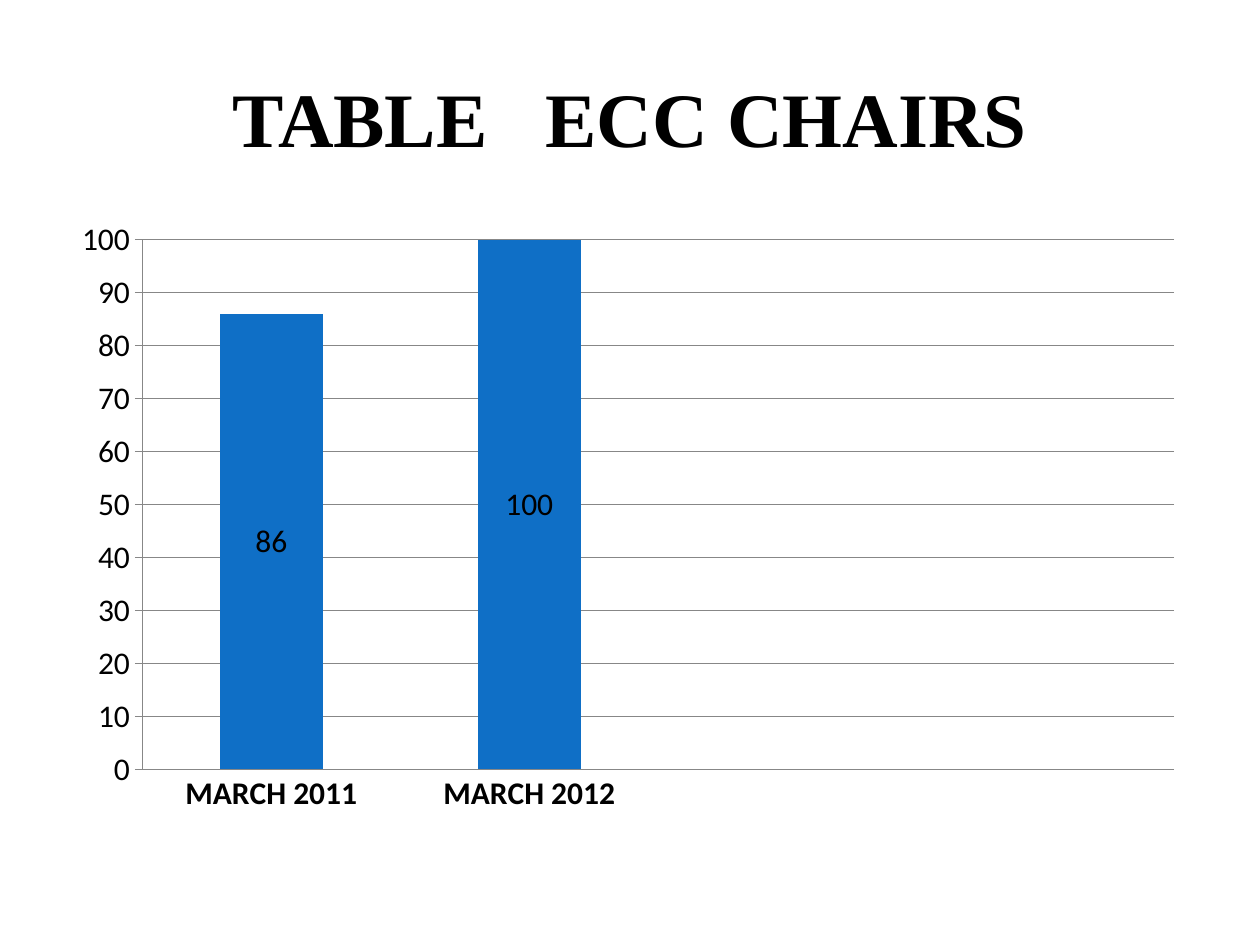
"""Build a slide with a column chart of ECC chairs in two years."""
from dataclasses import dataclass

from lxml import etree
from pptx import Presentation
from pptx.chart.data import CategoryChartData
from pptx.dml.color import RGBColor
from pptx.enum.chart import XL_CHART_TYPE, XL_LABEL_POSITION, XL_TICK_MARK
from pptx.enum.text import MSO_ANCHOR, PP_ALIGN
from pptx.util import Pt

STACKED = XL_CHART_TYPE.COLUMN_STACKED
CENTER = XL_LABEL_POSITION.CENTER
OUTSIDE, NO_TICK = XL_TICK_MARK.OUTSIDE, XL_TICK_MARK.NONE
MIDDLE, MID = MSO_ANCHOR.MIDDLE, PP_ALIGN.CENTER


@dataclass(frozen=True)
class Theme:
    ink: RGBColor = RGBColor(0, 0, 0)
    bar: RGBColor = RGBColor(0x0F, 0x6F, 0xC6)
    grid: RGBColor = RGBColor(0x87, 0x87, 0x87)
    head: str = "Times New Roman"
    body: str = "Calibri"
    large: int = 44
    small: int = 18


theme = Theme()


def write(frame, text, *, font, size, color, bold=False, align=MID):
    frame.word_wrap = True
    frame.vertical_anchor = MIDDLE
    line = frame.paragraphs[0]
    line.alignment = align
    run = line.add_run()
    run.text = text
    run.font.name, run.font.size, run.font.bold = font, Pt(size), bold
    run.font.color.rgb = color


deck = Presentation()
deck.slide_width, deck.slide_height = Pt(720), Pt(540)
slide = deck.slides.add_slide(deck.slide_layouts[5])

title = slide.shapes.title
title.left, title.top, title.width, title.height = Pt(36), Pt(21.6), Pt(648), Pt(90)
write(title.text_frame, "TABLE   ECC CHAIRS", font=theme.head,
      size=theme.large, color=theme.ink, bold=True)

data = CategoryChartData()
data.categories = ["MARCH 2011", "MARCH 2012", "", ""]
data.add_series("Series 1", [86, 100, None, None])
chart = slide.shapes.add_chart(STACKED, Pt(36), Pt(126), Pt(648), Pt(356.4), data).chart
chart.has_title = False
chart.has_legend = False
chart.font.name, chart.font.size = theme.body, Pt(theme.small)
chart.font.color.rgb = theme.ink

plot = chart.plots[0]
plot.gap_width, plot.overlap = 150, 100
plot.vary_by_categories = False
plot.has_data_labels = True
plot.data_labels.show_value = True
plot.data_labels.position = CENTER
fill = plot.series[0].format.fill
fill.solid()
fill.fore_color.rgb = theme.bar

scale, months = chart.value_axis, chart.category_axis
scale.minimum_scale, scale.maximum_scale, scale.major_unit = 0, 100, 10
scale.has_major_gridlines = True
scale.major_tick_mark, months.major_tick_mark = OUTSIDE, NO_TICK
for part in (scale, months, scale.major_gridlines):
    part.format.line.color.rgb = theme.grid
    part.format.line.width = Pt(0.75)
months.tick_labels.font.bold = True
months.tick_labels.font.size = Pt(theme.small)
months.tick_labels.offset = 300

area = chart._chartSpace.chart.plotArea
space = area.tag.split("}")[0] + "}"
for old in area.findall(space + "layout"):
    area.remove(old)
layout = etree.Element(space + "layout")
area.insert(0, layout)
manual = etree.SubElement(layout, space + "manualLayout")
rules = {"layoutTarget": "inner", "xMode": "edge", "yMode": "edge",
         "x": 0.07, "y": 0.03, "w": 0.9, "h": 0.85}
rules.update(x=0.07, y=0.03, w=0.91, h=0.85)
for name, value in rules.items():
    etree.SubElement(manual, space + name, val=str(value))

deck.save("out.pptx")
